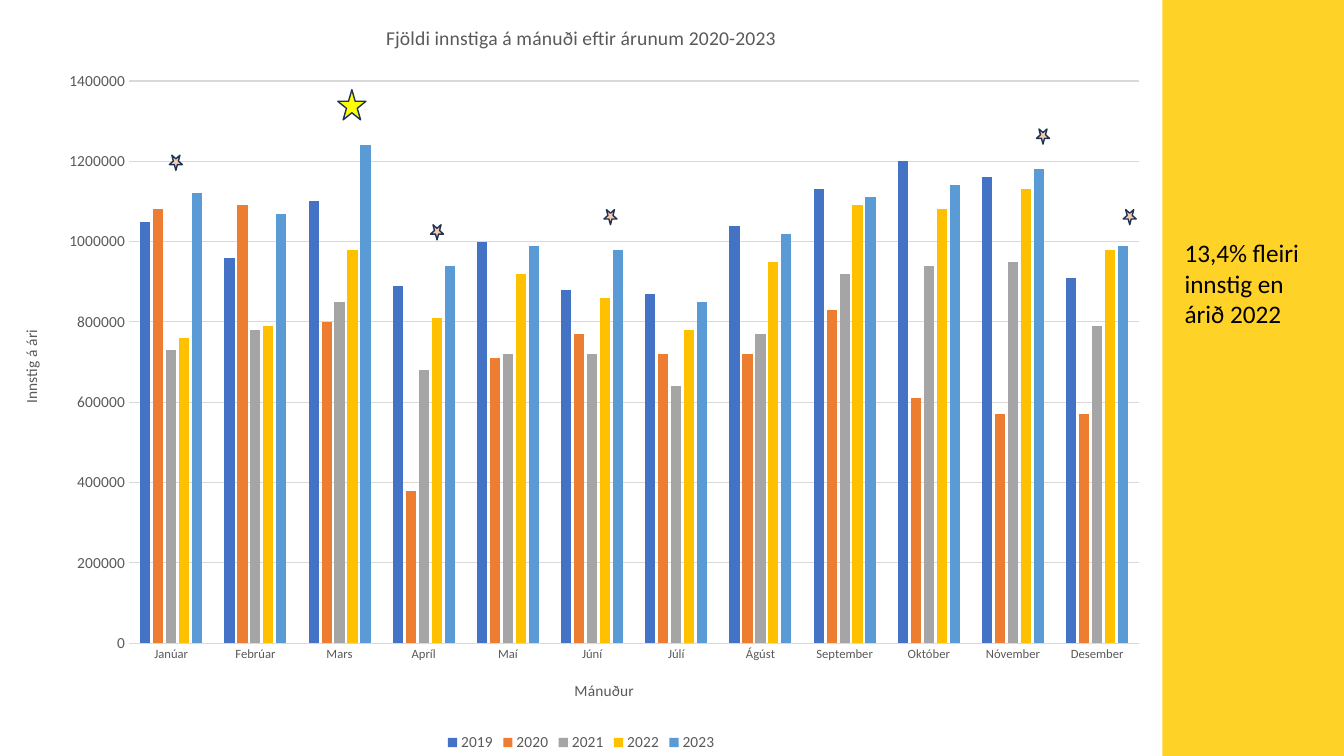
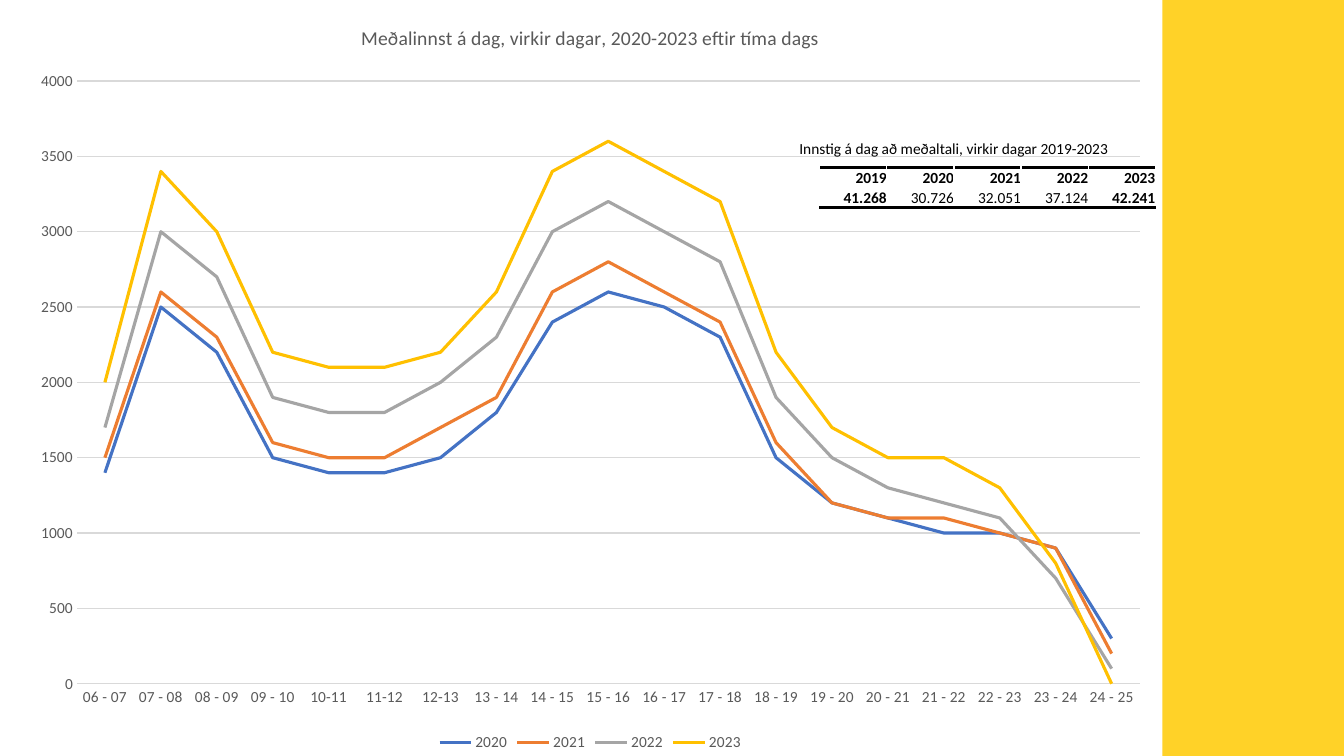
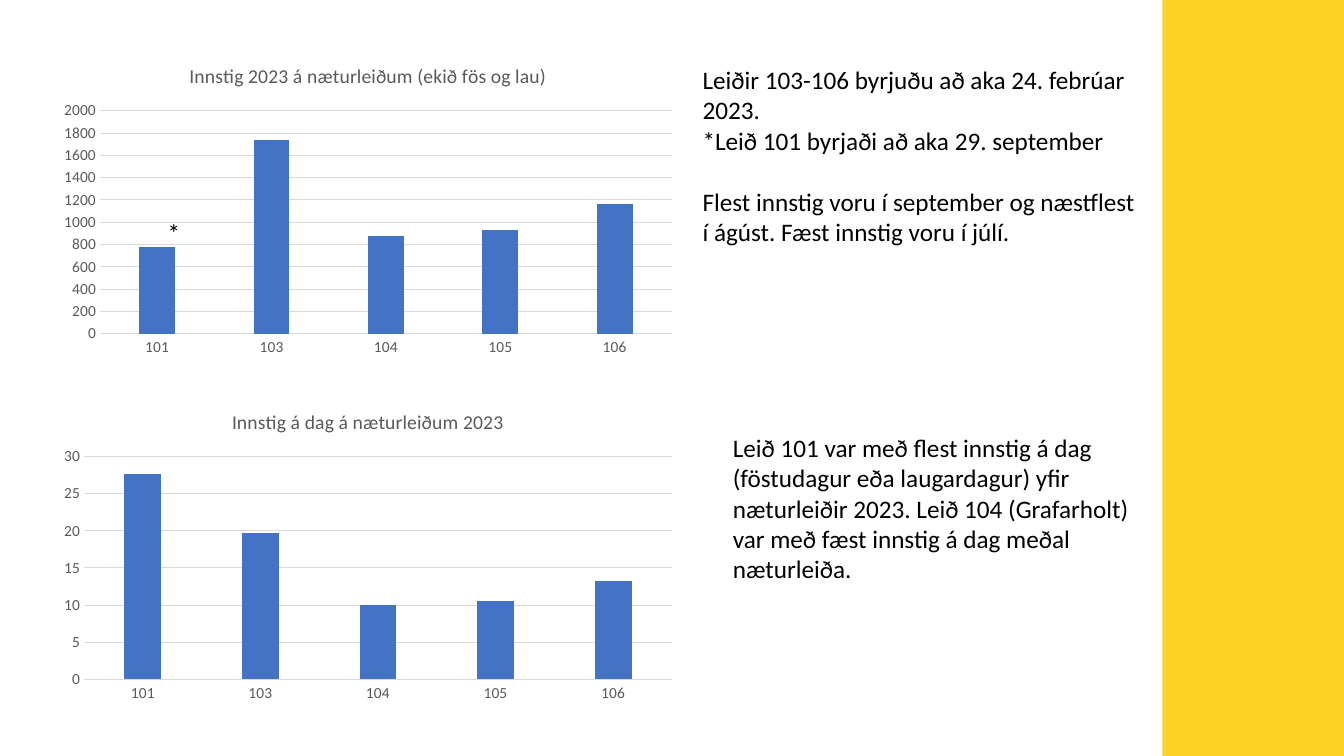
from dataclasses import dataclass

from lxml.etree import SubElement
from pptx import Presentation
from pptx.chart.data import CategoryChartData
from pptx.dml.color import RGBColor
from pptx.enum.chart import XL_CHART_TYPE as ChartType
from pptx.enum.chart import XL_LEGEND_POSITION as LegendPosition
from pptx.enum.chart import XL_TICK_MARK as TickMark
from pptx.enum.shapes import MSO_SHAPE as Preset
from pptx.enum.text import MSO_ANCHOR as Anchor
from pptx.enum.text import MSO_AUTO_SIZE as AutoSize
from pptx.enum.text import PP_ALIGN as Align
from pptx.oxml.ns import qn
from pptx.util import Inches, Pt


@dataclass(frozen=True)
class Theme:
    font: str = "Calibri"
    text: str = "000000"
    chart_text: str = "595959"
    grid: str = "D9D9D9"
    paper: str = "FFFFFF"
    band: str = "FFD228"
    star_line: str = "1E3256"
    big_star: str = "FFFF00"
    small_star: str = "F8CBAD"
    series: tuple = ("4472C4", "ED7D31", "A5A5A5", "FFC000", "5B9BD5")
    body_size: float = 18
    chart_title_size: float = 14
    label_size: float = 11
    small_label_size: float = 9


THEME = Theme()
SLIDE_WIDTH, SLIDE_HEIGHT, BAND_LEFT = 13.33, 7.5, 11.53

MONTHS = ("Janúar", "Febrúar", "Mars", "Apríl", "Maí", "Júní", "Júlí",
          "Ágúst", "September", "Október", "Nóvember", "Desember")
MONTHLY_BOARDINGS = {
    "2019": (1050000, 960000, 1100000, 890000, 1000000, 880000,
             870000, 1040000, 1130000, 1200000, 1160000, 910000),
    "2020": (1080000, 1090000, 800000, 380000, 710000, 770000,
             720000, 720000, 830000, 610000, 570000, 570000),
    "2021": (730000, 780000, 850000, 680000, 720000, 720000,
             640000, 770000, 920000, 940000, 950000, 790000),
    "2022": (760000, 790000, 980000, 810000, 920000, 860000,
             780000, 950000, 1090000, 1080000, 1130000, 980000),
    "2023": (1120000, 1070000, 1240000, 940000, 990000, 980000,
             850000, 1020000, 1110000, 1140000, 1180000, 990000),
}
HOURS = ("06 - 07", "07 - 08", "08 - 09", "09 - 10", "10-11", "11-12", "12-13",
         "13 - 14", "14 - 15", "15 - 16", "16 - 17", "17 - 18", "18 - 19",
         "19 - 20", "20 - 21", "21 - 22", "22 - 23", "23 - 24", "24 - 25")
HOURLY_BOARDINGS = {
    "2020": (1400, 2500, 2200, 1500, 1400, 1400, 1500, 1800, 2400, 2600,
             2500, 2300, 1500, 1200, 1100, 1000, 1000, 900, 300),
    "2021": (1500, 2600, 2300, 1600, 1500, 1500, 1700, 1900, 2600, 2800,
             2600, 2400, 1600, 1200, 1100, 1100, 1000, 900, 200),
    "2022": (1700, 3000, 2700, 1900, 1800, 1800, 2000, 2300, 3000, 3200,
             3000, 2800, 1900, 1500, 1300, 1200, 1100, 700, 100),
    "2023": (2000, 3400, 3000, 2200, 2100, 2100, 2200, 2600, 3400, 3600,
             3400, 3200, 2200, 1700, 1500, 1500, 1300, 800, 0),
}
DAILY_AVERAGES = (("2019", "2020", "2021", "2022", "2023"),
                  ("41.268", "30.726", "32.051", "37.124", "42.241"))
NIGHT_ROUTES = ("101", "103", "104", "105", "106")


def color(value):
    return RGBColor.from_string(value)


def inches(*lengths):
    return [Inches(length) for length in lengths]


def style_font(font, size, ink, bold=False):
    font.name = THEME.font
    font.size = Pt(size)
    font.bold = bold
    font.color.rgb = color(ink)


def add_run(paragraph, text, size, ink=THEME.text, bold=False):
    run = paragraph.add_run()
    run.text = text
    style_font(run.font, size, ink, bold)


def add_text(slide, box, *lines, size=THEME.body_size):
    """Add a text box and return its paragraphs, one for each line."""
    frame = slide.shapes.add_textbox(*inches(*box)).text_frame
    frame.word_wrap = True
    frame.auto_size = AutoSize.SHAPE_TO_FIT_TEXT
    for index, line in enumerate(lines):
        paragraph = frame.add_paragraph() if index else frame.paragraphs[0]
        add_run(paragraph, line, size)
    return frame.paragraphs


def add_filled_shape(slide, preset, box, fill):
    shape = slide.shapes.add_shape(preset, *inches(*box))
    shape.shadow.inherit = False
    shape.fill.solid()
    shape.fill.fore_color.rgb = color(fill)
    shape.line.fill.background()
    return shape


def add_star(slide, box, fill, flipped=False):
    star = add_filled_shape(slide, Preset.STAR_5_POINT, box, fill)
    star.line.color.rgb = color(THEME.star_line)
    star.line.width = Pt(1)
    if flipped:
        star.element.spPr.xfrm.set("flipV", "1")


def move_band_to_layout(slide):
    """Draw the side band once, on the layout that all slides use."""
    band = add_filled_shape(
        slide, Preset.RECTANGLE,
        (BAND_LEFT, 0, SLIDE_WIDTH - BAND_LEFT, SLIDE_HEIGHT), THEME.band)
    slide.slide_layout.shapes.element.append(band.element)


def add_axis_title(axis, text):
    add_run(axis.axis_title.text_frame.paragraphs[0], text,
            THEME.label_size, THEME.chart_text)


def style_axis(axis, label_size=THEME.label_size):
    axis.major_tick_mark = axis.minor_tick_mark = TickMark.NONE
    style_font(axis.tick_labels.font, label_size, THEME.chart_text)


def style_axes(chart, top, step, category_size):
    style_axis(chart.category_axis, category_size)
    axis_line = chart.category_axis.format.line
    axis_line.color.rgb = color(THEME.grid)
    axis_line.width = Pt(0.75)

    axis = chart.value_axis
    style_axis(axis)
    axis.minimum_scale, axis.maximum_scale, axis.major_unit = 0, top, step
    axis.tick_labels.number_format = "0"
    axis.tick_labels.number_format_is_linked = False
    axis.format.line.fill.background()
    axis.has_major_gridlines = True
    grid_line = axis.major_gridlines.format.line
    grid_line.color.rgb = color(THEME.grid)
    grid_line.width = Pt(0.75)


def style_series(chart, chart_type):
    plot = chart.plots[0]
    plot.vary_by_categories = False
    if chart_type == ChartType.COLUMN_CLUSTERED:
        plot.gap_width, plot.overlap = 219, -27
    for series, ink in zip(plot.series, THEME.series):
        if chart_type == ChartType.LINE:
            series.smooth = False
            series.format.line.color.rgb = color(ink)
            series.format.line.width = Pt(2.25)
        else:
            series.format.fill.solid()
            series.format.fill.fore_color.rgb = color(ink)


def add_chart(slide, box, title, categories, series, top, step,
              chart_type=ChartType.COLUMN_CLUSTERED,
              category_size=THEME.label_size):
    data = CategoryChartData()
    data.categories = categories
    for name, values in series.items():
        data.add_series(name, values)
    chart = slide.shapes.add_chart(chart_type, *inches(*box), data).chart
    style_font(chart.font, 10, THEME.text)
    chart.has_title = True
    add_run(chart.chart_title.text_frame.paragraphs[0], title,
            THEME.chart_title_size, THEME.chart_text)
    chart.has_legend = len(series) > 1
    if chart.has_legend:
        chart.legend.position = LegendPosition.BOTTOM
        chart.legend.include_in_layout = False
        style_font(chart.legend.font, THEME.label_size, THEME.chart_text)
    style_axes(chart, top, step, category_size)
    style_series(chart, chart_type)
    return chart


def add_border(cell, edge):
    properties = cell._tc.get_or_add_tcPr()
    line = SubElement(properties, qn(f"a:{edge}"), w=str(Pt(2)))
    fill = SubElement(line, qn("a:solidFill"))
    SubElement(fill, qn("a:srgbClr"), val=THEME.text)
    properties.insert(0, line)


def add_table(slide, box, rows):
    table = slide.shapes.add_table(
        len(rows), len(rows[0]), *inches(*box)).table
    table.first_row = table.horz_banding = False
    last_column = len(rows[0]) - 1
    for row_index, row in enumerate(rows):
        for column_index, text in enumerate(row):
            cell = table.cell(row_index, column_index)
            cell.margin_left = cell.margin_right = 0
            cell.margin_top = cell.margin_bottom = 0
            cell.vertical_anchor = Anchor.BOTTOM
            cell.fill.solid()
            cell.fill.fore_color.rgb = color(THEME.paper)
            add_border(cell, "lnB" if row_index else "lnT")
            paragraph = cell.text_frame.paragraphs[0]
            paragraph.alignment = Align.RIGHT
            bold = row_index == 0 or column_index in (0, last_column)
            add_run(paragraph, text, THEME.label_size, bold=bold)


def build_months(slide):
    chart = add_chart(
        slide, (0, 0, BAND_LEFT, SLIDE_HEIGHT),
        "Fjöldi innstiga á mánuði eftir árunum 2020-2023",
        MONTHS, MONTHLY_BOARDINGS, 1400000, 200000,
        category_size=THEME.small_label_size)
    add_axis_title(chart.category_axis, "Mánuður")
    add_axis_title(chart.value_axis, "Innstig á ári")
    title_body = chart.value_axis.axis_title.element.find(f".//{qn('a:bodyPr')}")
    title_body.set("rot", "-5400000")
    title_body.set("vert", "horz")

    add_star(slide, (3.35, 0.89, 0.28, 0.3), THEME.big_star)
    add_text(slide, (11.65, 2.31, 1.43, 1.01),
             "13,4% fleiri innstig en árið 2022")
    for left, top in ((1.68, 1.54), (4.27, 2.23), (5.99, 2.08),
                      (10.28, 1.28), (11.14, 2.08)):
        add_star(slide, (left, top, 0.13, 0.15), THEME.small_star, flipped=True)


def build_hours(slide):
    add_chart(slide, (0.18, 0, BAND_LEFT - 0.18, SLIDE_HEIGHT),
              "Meðalinnst á dag, virkir dagar, 2020-2023 eftir tíma dags",
              HOURS, HOURLY_BOARDINGS, 4000, 500, ChartType.LINE)
    add_table(slide, (8.13, 1.66, 3.33, 0.4), DAILY_AVERAGES)
    add_text(slide, (7.83, 1.33, 3.37, 0.29),
             "Innstig á dag að meðaltali, virkir dagar 2019-2023",
             size=THEME.label_size)


def build_night_routes(slide):
    charts = (
        (0.47, "Innstig 2023 á næturleiðum (ekið fös og lau)",
         (780, 1740, 880, 930, 1160), 2000, 200),
        (3.9, "Innstig á dag á næturleiðum 2023",
         (27.7, 19.7, 10, 10.6, 13.2), 30, 5),
    )
    for chart_top, title, values, top, step in charts:
        add_chart(slide, (0.51, chart_top, 6.28, 3.13), title,
                  NIGHT_ROUTES, {"Series 1": values}, top, step)
    paragraphs = add_text(
        slide, (6.87, 0.59, 4.57, 1.92),
        "Leiðir 103-106 byrjuðu að aka 24. febrúar 2023.",
        "*Leið 101 byrjaði að aka 29. september",
        "Flest innstig voru í september og næstflest í ágúst. "
        "Fæst innstig voru í júlí.")
    paragraphs[-1].space_before = Pt(22)
    add_text(slide, (7.17, 4.24, 4.26, 2.22),
             "Leið 101 var með flest innstig á dag (föstudagur eða laugardagur) "
             "yfir næturleiðir 2023. Leið 104 (Grafarholt) var með fæst innstig "
             "á dag meðal næturleiða.")
    add_text(slide, (1.57, 2.11, 0.19, 0.4), "*")


def main():
    presentation = Presentation()
    presentation.slide_width, presentation.slide_height = inches(
        SLIDE_WIDTH, SLIDE_HEIGHT)
    blank_layout = presentation.slide_layouts[6]
    builders = (build_months, build_hours, build_night_routes)
    slides = [presentation.slides.add_slide(blank_layout) for _ in builders]
    move_band_to_layout(slides[0])
    for build, slide in zip(builders, slides):
        build(slide)
    presentation.save("out.pptx")


if __name__ == "__main__":
    main()
